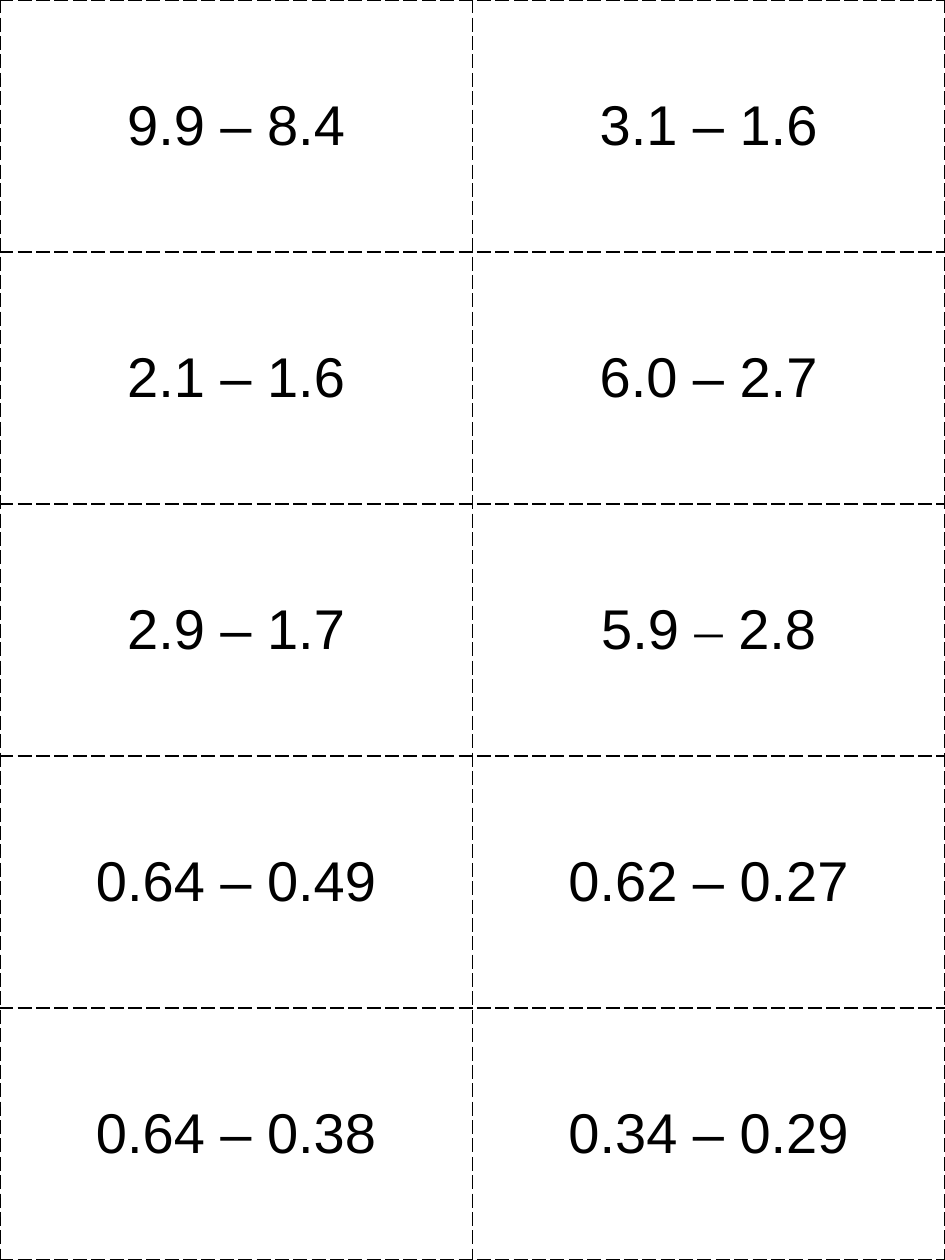
import pptx
import pptx.dml.color
import pptx.enum.text
import pptx.oxml
import pptx.oxml.ns
import pptx.util

BLACK = pptx.dml.color.RGBColor(0x00, 0x00, 0x00)
WHITE = pptx.dml.color.RGBColor(0xFF, 0xFF, 0xFF)

# Each sum is first number, second number and the font of the minus sign
SUMS = [
    [("9.9", "8.4", "Arial"), ("3.1", "1.6", "Arial")],
    [("2.1", "1.6", "Arial"), ("6.0", "2.7", "Arial")],
    [("2.9", "1.7", "Arial"), ("5.9", "2.8", "Times New Roman")],
    [("0.64", "0.49", "Arial"), ("0.62", "0.27", "Arial")],
    [("0.64", "0.38", "Arial"), ("0.34", "0.29", "Arial")],
]


class CardSheet:
    """Holds the card style and the current slide."""

    font = {"name": "Arial", "size": pptx.util.Pt(32), "bold": False}
    border_width = pptx.util.Pt(1)
    border_dash = "lgDash"

    def __init__(self, deck):
        self.width, self.height = deck.slide_width, deck.slide_height
        self.slide = deck.slides.add_slide(deck.slide_layouts[6])
        fill = self.slide.background.fill
        fill.solid()
        fill.fore_color.rgb = WHITE

    def add_cards(self, sums):
        """Fill the whole slide with an even grid of cards."""
        rows, columns = len(sums), len(sums[0])
        table = self.slide.shapes.add_table(
            rows, columns, 0, 0, self.width, self.height).table
        table.first_row = table.horz_banding = False
        for row, row_sums in enumerate(sums):
            for column, parts in enumerate(row_sums):
                self.add_card(table.cell(row, column), *parts)

    def add_card(self, cell, first, second, sign_font):
        """Write one subtraction in the middle of a dashed cell."""
        self.add_borders(cell)
        cell.fill.background()
        cell.vertical_anchor = pptx.enum.text.MSO_ANCHOR.MIDDLE
        para = cell.text_frame.paragraphs[0]
        para.alignment = pptx.enum.text.PP_ALIGN.CENTER
        if sign_font == self.font["name"]:
            self.add_text(para, f"{first} – {second}")
        else:
            self.add_text(para, f"{first} ")
            self.add_text(para, "–", name=sign_font)
            self.add_text(para, f" {second}")

    def add_text(self, para, text, **changes):
        run = para.add_run()
        run.text = text
        for key, value in {**self.font, **changes}.items():
            setattr(run.font, key, value)
        run.font.color.rgb = BLACK

    def add_borders(self, cell):
        """Draw the dashed cutting lines on all four sides."""
        properties = cell._tc.get_or_add_tcPr()
        for side in ("lnL", "lnR", "lnT", "lnB"):
            properties.append(pptx.oxml.parse_xml(
                f'<a:{side} {pptx.oxml.ns.nsdecls("a")} w="{self.border_width}">'
                f'<a:solidFill><a:srgbClr val="{BLACK}"/></a:solidFill>'
                f'<a:prstDash val="{self.border_dash}"/></a:{side}>'))


def main():
    deck = pptx.Presentation()
    deck.slide_width = pptx.util.Inches(7.5)
    deck.slide_height = pptx.util.Inches(10)

    # Subtraction cards to cut out
    CardSheet(deck).add_cards(SUMS)

    deck.save("out.pptx")


if __name__ == "__main__":
    main()
